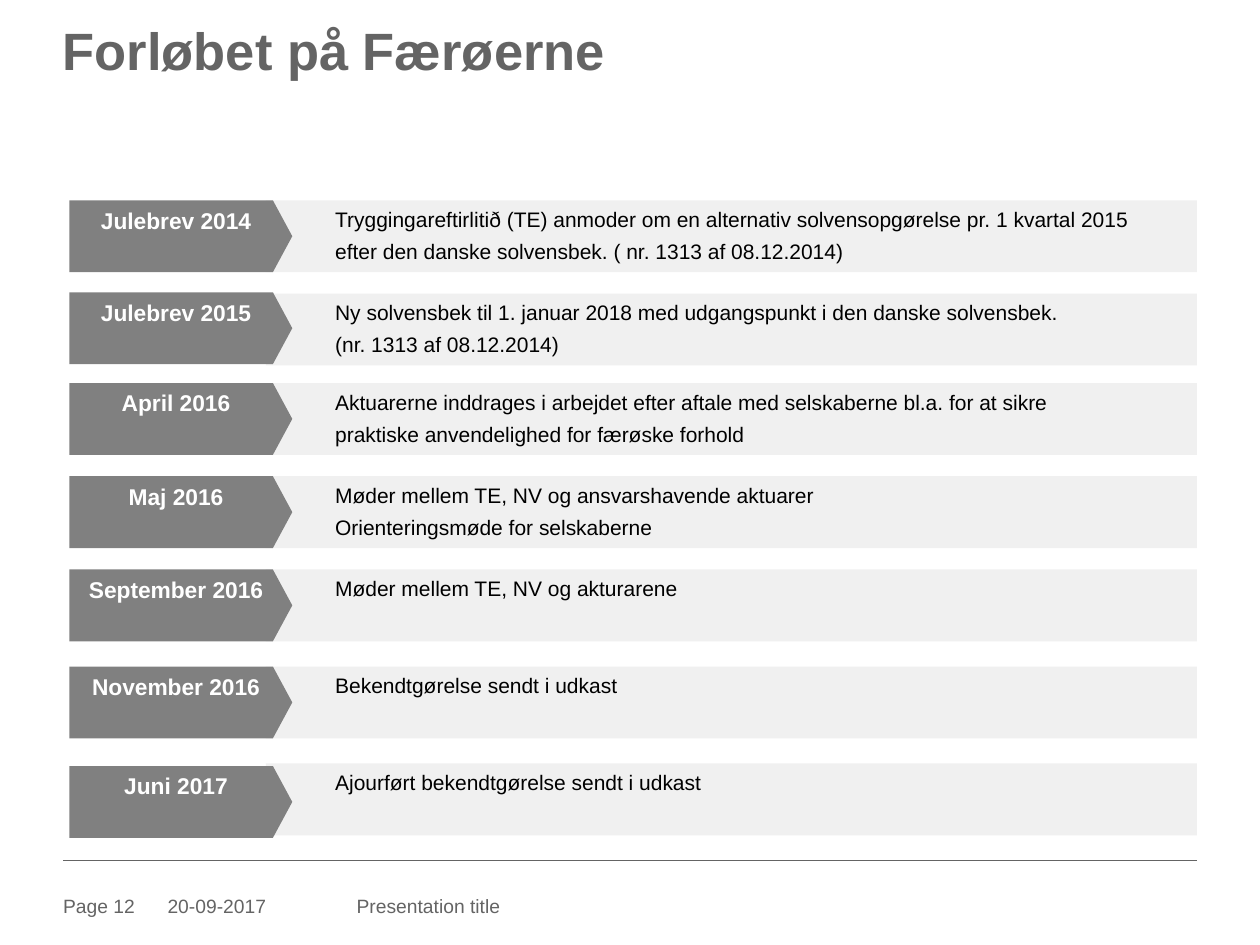
from lxml import etree
from pptx import Presentation
from pptx.dml.color import RGBColor
from pptx.enum.shapes import MSO_CONNECTOR, MSO_SHAPE
from pptx.enum.text import MSO_ANCHOR, PP_ALIGN
from pptx.oxml.ns import qn
from pptx.util import Inches, Pt

RECT, PENTAGON = MSO_SHAPE.RECTANGLE, MSO_SHAPE.PENTAGON
STRAIGHT = MSO_CONNECTOR.STRAIGHT
TOP = MSO_ANCHOR.TOP
LEFT, CENTER = PP_ALIGN.LEFT, PP_ALIGN.CENTER

FONT = "Arial"
GREY, BAR, LABEL, BLACK, WHITE = "646464", "F0F0F0", "808080", "000000", "FFFFFF"
ROW_H, LABEL_W, BAR_OFFSET = 0.57, 1.77, 1.56
PAD = 0.05

MILESTONES = [
    (1.59, 1.59, "Julebrev 2014", [
        "Tryggingareftirlitið (TE) anmoder om en alternativ solvensopgørelse pr. 1 kvartal 2015",
        "efter den danske solvensbek. ( nr. 1313 af 08.12.2014)"]),
    (2.33, 2.32, "Julebrev 2015", [
        "Ny solvensbek til 1. januar 2018 med udgangspunkt i den danske solvensbek.",
        "(nr. 1313 af 08.12.2014)"]),
    (3.04, 3.04, "April 2016", [
        "Aktuarerne inddrages i arbejdet efter aftale med selskaberne bl.a. for at sikre",
        "praktiske anvendelighed for færøske forhold"]),
    (3.78, 3.78, "Maj 2016", [
        "Møder mellem TE, NV og ansvarshavende aktuarer",
        "Orienteringsmøde for selskaberne"]),
    (4.52, 4.52, "September 2016", ["Møder mellem TE, NV og akturarene"]),
    (5.29, 5.29, "November 2016", ["Bekendtgørelse sendt i udkast"]),
    (6.06, 6.08, "Juni 2017", ["Ajourført bekendtgørelse sendt i udkast"]),
]
FOOTER = [(0, 0.79, "Page 12"), (0.83, 1.3, "20-09-2017"), (2.33, 3.76, "Presentation title")]


def rgb(value):
    return RGBColor.from_string(value)


def write(sp, lines, size, color, bold=False, align=LEFT, pad=0, left=None, spacing=None):
    tf = sp.text_frame
    tf.word_wrap = True
    tf.vertical_anchor = TOP
    tf.margin_left = Inches(pad if left is None else left)
    tf.margin_top = tf.margin_right = tf.margin_bottom = Inches(pad)
    for i, line in enumerate(lines):
        p = tf.add_paragraph() if i else tf.paragraphs[0]
        p.alignment = align
        if i:
            p.space_before = Pt(4)
        if spacing:
            p.line_spacing = spacing
        r = p.add_run()
        r.text = line
        r.font.name = FONT
        r.font.size = Pt(size)
        r.font.bold = bold
        r.font.color.rgb = rgb(color)


def add_block(s, kind, x, y, w, h, fill):
    sp = s.shapes.add_shape(kind, Inches(x), Inches(y), Inches(w), Inches(h))
    sp.shadow.inherit = False
    sp.fill.solid()
    sp.fill.fore_color.rgb = rgb(fill)
    sp.line.fill.background()
    return sp


def add_title(s, x, y, w, h):
    sp = s.shapes.add_textbox(Inches(x), Inches(y), Inches(w), Inches(h))
    write(sp, ["Forløbet på Færøerne"], 30, GREY, bold=True, spacing=0.85)


def add_milestone(s, x, right, bar_y, label_y, label, lines):
    bar_x = x + BAR_OFFSET
    bar = add_block(s, RECT, bar_x, bar_y, right - bar_x, ROW_H, BAR)
    write(bar, lines, 12, BLACK, pad=PAD, left=0.55)
    tag = add_block(s, PENTAGON, x, label_y, LABEL_W, ROW_H, LABEL)
    tag.adjustments[0] = 0.27
    write(tag, [label], 13, WHITE, bold=True, align=CENTER, pad=PAD)


def add_footer(s, x, y, w):
    line = s.shapes.add_connector(STRAIGHT, Inches(x), Inches(y), Inches(x + w), Inches(y))
    line.line.color.rgb = rgb(GREY)
    line.line.width = Pt(0.25)
    etree.SubElement(line._element.spPr, qn("a:effectLst"))
    for dx, width, text in FOOTER:
        sp = s.shapes.add_textbox(Inches(x + dx), Inches(y + 0.27), Inches(width), Inches(0.22))
        write(sp, [text], 11, GREY)


def main():
    prs = Presentation()
    prs.slide_width, prs.slide_height = Inches(10), Inches(7.5)
    s = prs.slides.add_slide(prs.slide_layouts[6])
    add_footer(s, 0.5, 6.83, 9)
    for milestone in MILESTONES:
        add_milestone(s, 0.55, 9.5, *milestone)
    add_title(s, 0.5, 0.22, 9, 0.94)
    prs.save("out.pptx")


if __name__ == "__main__":
    main()
